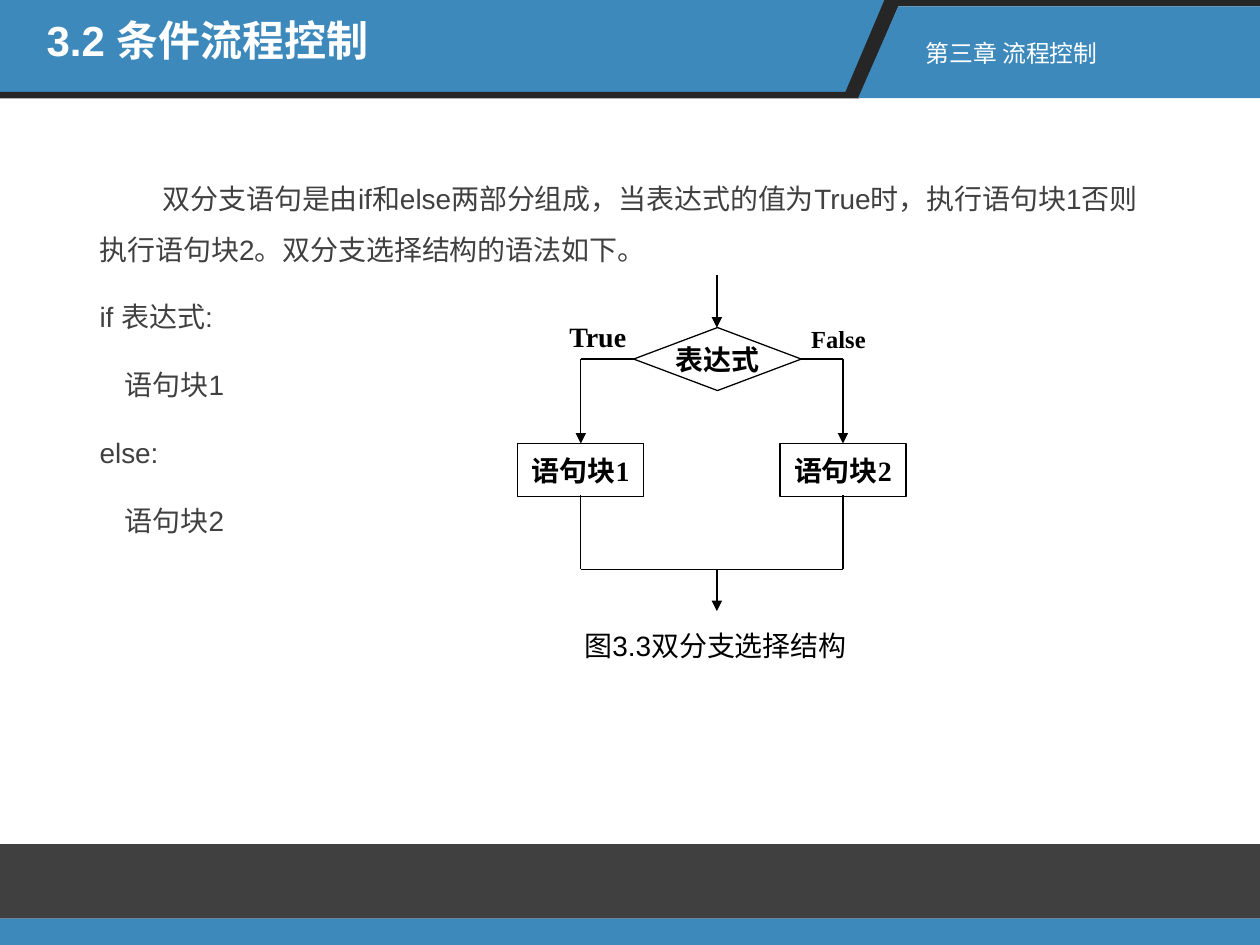
from dataclasses import dataclass

from lxml.etree import SubElement
from pptx import Presentation
from pptx.dml.color import RGBColor
from pptx.enum.shapes import MSO_CONNECTOR, MSO_SHAPE
from pptx.enum.text import MSO_ANCHOR, MSO_AUTO_SIZE, PP_ALIGN
from pptx.oxml.ns import qn
from pptx.util import Emu, Inches, Pt

BLUE = RGBColor(0x3D, 0x89, 0xBC)
INK = RGBColor(0x26, 0x26, 0x26)
GRAY = RGBColor(0x40, 0x40, 0x40)
BLACK = RGBColor(0, 0, 0)
WHITE = RGBColor(0xFF, 0xFF, 0xFF)

WIDTH, HEIGHT = Inches(10), Inches(7.5)
COLUMNS, ROWS = 100, 75

LEFT, MIDDLE, RIGHT = 46.1, 56.9, 66.9
ENTRY, BRANCH, BLOCK, BLOCK_END, JOIN, EXIT = 21.8, 28.5, 35.2, 39.3, 45.2, 48.5
DIAMOND_LEFT, DIAMOND_RIGHT = 50.3, 63.6


@dataclass(frozen=True)
class Area:
    column: float
    row: float
    columns: float
    rows: float

    def placement(self) -> dict:
        return {
            "left": across(self.column),
            "top": down(self.row),
            "width": across(self.columns),
            "height": down(self.rows),
        }


@dataclass(frozen=True)
class Style:
    size: float
    color: RGBColor
    name: str = "Arial"
    bold: bool = False


@dataclass(frozen=True)
class Node:
    kind: MSO_SHAPE
    area: Area
    text: str


@dataclass(frozen=True)
class Label:
    area: Area
    text: str
    style: Style
    wrap: bool = False


@dataclass(frozen=True)
class Edge:
    start: tuple
    end: tuple
    arrow: bool = False


@dataclass(frozen=True)
class BodyLine:
    text: str
    margin: float = 0
    indent: float = 0


def across(columns: float) -> Emu:
    return Emu(round(WIDTH * columns / COLUMNS))


def down(rows: float) -> Emu:
    return Emu(round(HEIGHT * rows / ROWS))


def apply(target, values: dict) -> None:
    for name, value in values.items():
        setattr(target, name, value)


def write(para, text: str, style: Style) -> None:
    span = para.add_run()
    span.text = text
    apply(span.font, {"name": style.name, "size": Pt(style.size), "bold": style.bold})
    span.font.color.rgb = style.color


def draw_polygon(page, points: list, color: RGBColor) -> None:
    corners = [(across(column), down(row)) for column, row in points]
    builder = page.shapes.build_freeform(*corners[0])
    builder.add_line_segments(corners[1:], close=True)
    shape = builder.convert_to_shape()
    shape.shadow.inherit = False
    shape.fill.solid()
    shape.fill.fore_color.rgb = color
    shape.line.fill.background()


def draw_bar(page, row: float, end: float, color: RGBColor) -> None:
    area = Area(0, row, COLUMNS, end - row)
    shape = page.shapes.add_shape(MSO_SHAPE.RECTANGLE, **area.placement())
    shape.shadow.inherit = False
    shape.fill.solid()
    shape.fill.fore_color.rgb = color
    shape.line.fill.background()


def draw_edge(page, edge: Edge) -> None:
    (x1, y1), (x2, y2) = edge.start, edge.end
    line = page.shapes.add_connector(
        MSO_CONNECTOR.STRAIGHT, across(x1), down(y1), across(x2), down(y2)
    )
    line.line.color.rgb = BLACK
    line.line.width = Pt(0.75)
    properties = line.element.spPr
    if edge.arrow:
        SubElement(properties.find(qn("a:ln")), qn("a:tailEnd"), type="triangle")
    SubElement(properties, qn("a:effectLst"))


def draw_node(page, node: Node, style: Style) -> None:
    shape = page.shapes.add_shape(node.kind, **node.area.placement())
    shape.shadow.inherit = False
    shape.fill.background()
    shape.line.color.rgb = BLACK
    shape.line.width = Pt(0.75)
    apply(shape.text_frame, {"word_wrap": False, "vertical_anchor": MSO_ANCHOR.MIDDLE})
    para = shape.text_frame.paragraphs[0]
    para.alignment = PP_ALIGN.CENTER
    write(para, node.text, style)


def draw_label(page, label: Label) -> None:
    box = page.shapes.add_textbox(**label.area.placement())
    box.text_frame.word_wrap = label.wrap
    write(box.text_frame.paragraphs[0], label.text, label.style)


def fill_placeholder(box, area: Area, lines: list, style: Style, spacing: float) -> None:
    box.element.getparent().append(box.element)
    apply(box, area.placement())
    frame = box.text_frame
    apply(frame, {
        "word_wrap": True,
        "auto_size": MSO_AUTO_SIZE.NONE,
        "vertical_anchor": MSO_ANCHOR.TOP,
    })
    for index, line in enumerate(lines):
        para = frame.add_paragraph() if index else frame.paragraphs[0]
        apply(para, {
            "alignment": PP_ALIGN.LEFT,
            "line_spacing": spacing,
            "space_before": Pt(10),
        })
        properties = para._p.get_or_add_pPr()
        properties.set("marL", str(across(line.margin)))
        properties.set("indent", str(across(line.indent)))
        SubElement(properties, qn("a:buNone"))
        write(para, line.text, style)


FLOW = Style(16, BLACK, "Times New Roman", True)
NODES = [
    Node(MSO_SHAPE.FLOWCHART_DECISION, Area(DIAMOND_LEFT, 26, 13.3, 5), "表达式"),
    Node(MSO_SHAPE.RECTANGLE, Area(LEFT - 5, BLOCK, 10, 4.2), "语句块1"),
    Node(MSO_SHAPE.RECTANGLE, Area(RIGHT - 5, BLOCK, 10, 4.2), "语句块2"),
]
EDGES = [
    Edge((MIDDLE, ENTRY), (MIDDLE, 26), True),
    Edge((LEFT, BRANCH), (DIAMOND_LEFT, BRANCH)),
    Edge((DIAMOND_RIGHT, BRANCH), (RIGHT, BRANCH)),
    *(Edge((side, BRANCH), (side, BLOCK), True) for side in (LEFT, RIGHT)),
    *(Edge((side, BLOCK_END), (side, JOIN)) for side in (LEFT, RIGHT)),
    Edge((LEFT, JOIN), (RIGHT, JOIN)),
    Edge((MIDDLE, JOIN), (MIDDLE, EXIT), True),
]
LABELS = [
    Label(Area(44.2, 24.9, 6.5, 3.7), "True", FLOW),
    Label(Area(63.4, 25.2, 6.3, 3.4), "False", Style(14, BLACK, "Times New Roman", True)),
    Label(Area(45.4, 49.4, 23.1, 3.7), "图3.3双分支选择结构", Style(16, BLACK), True),
    Label(Area(72.5, 2.6, 15.7, 3.3), "第三章 流程控制", Style(13.6, WHITE)),
]
BODY = [
    BodyLine(
        "双分支语句是由if和else两部分组成，当表达式的值为True时，执行语句块1"
        "否则执行语句块2。双分支选择结构的语法如下。",
        indent=5,
    ),
    BodyLine("if 表达式:"),
    BodyLine("语句块1", margin=2),
    BodyLine("else:"),
    BodyLine("语句块2", margin=2),
]

deck = Presentation()
apply(deck, {"slide_width": WIDTH, "slide_height": HEIGHT})
page = deck.slides.add_slide(deck.slide_layouts[1])

draw_polygon(page, [(0, 0), (70.5, 0), (67.4, 7.3), (0, 7.3)], BLUE)
draw_polygon(page, [(70.2, 0), (100, 0), (100, 0.5), (71.3, 0.5), (68.2, 7.8),
                    (0, 7.8), (0, 7.3), (67.1, 7.3)], INK)
draw_polygon(page, [(71.3, 0.5), (100, 0.5), (100, 7.8), (68.1, 7.8)], BLUE)
draw_bar(page, 67, 72.9, GRAY)
draw_bar(page, 72.9, ROWS, BLUE)

fill_placeholder(page.placeholders[1], Area(6.9, 12.6, 86.2, 44.2), BODY, Style(16, GRAY), 1.5)
for edge in EDGES:
    draw_edge(page, edge)
for node in NODES:
    draw_node(page, node, FLOW)
for label in LABELS:
    draw_label(page, label)
fill_placeholder(page.shapes.title, Area(2.7, 1.1, 40.8, 6.2),
                 [BodyLine("3.2 条件流程控制")], Style(24, WHITE, bold=True), 0.9)

deck.save("out.pptx")
